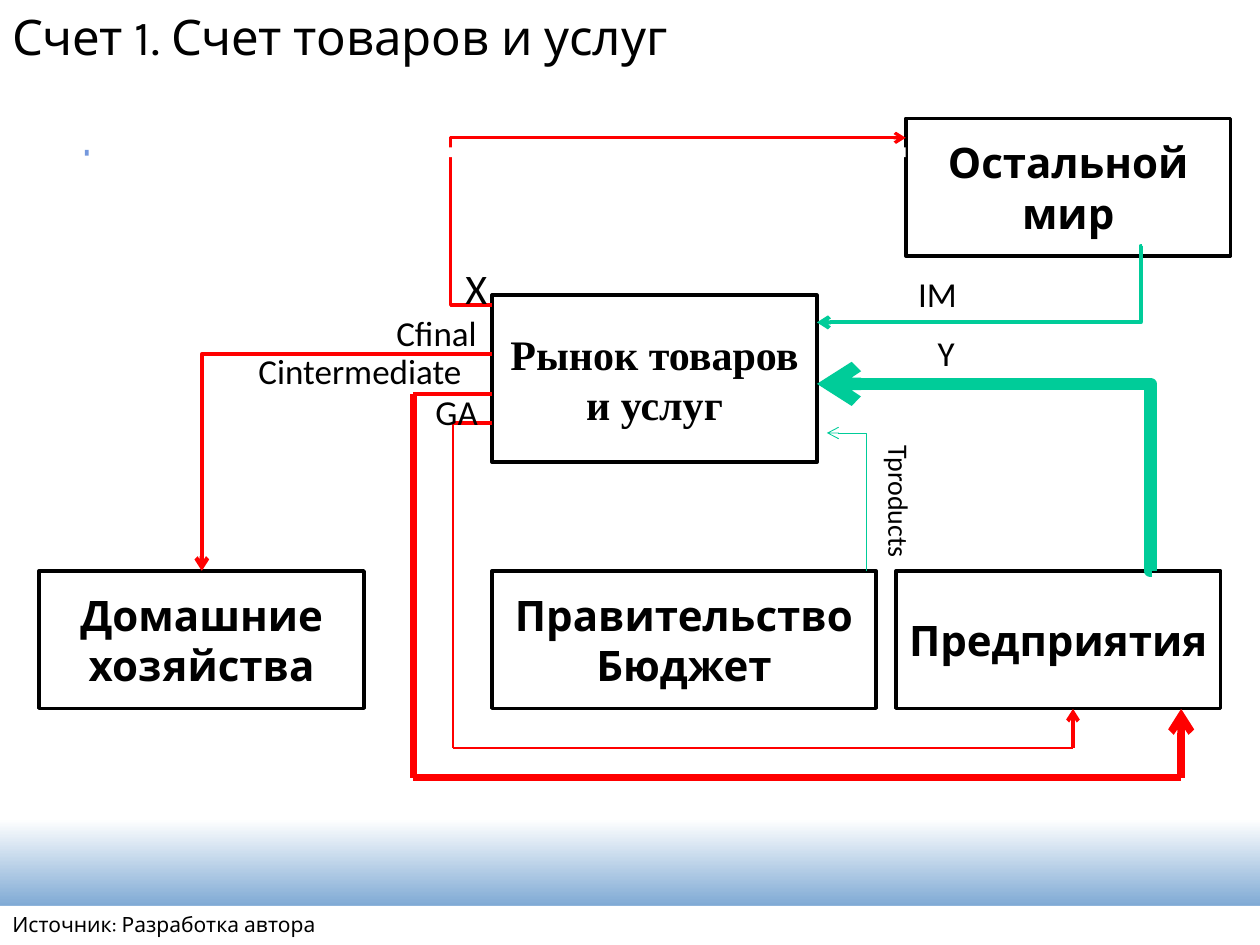
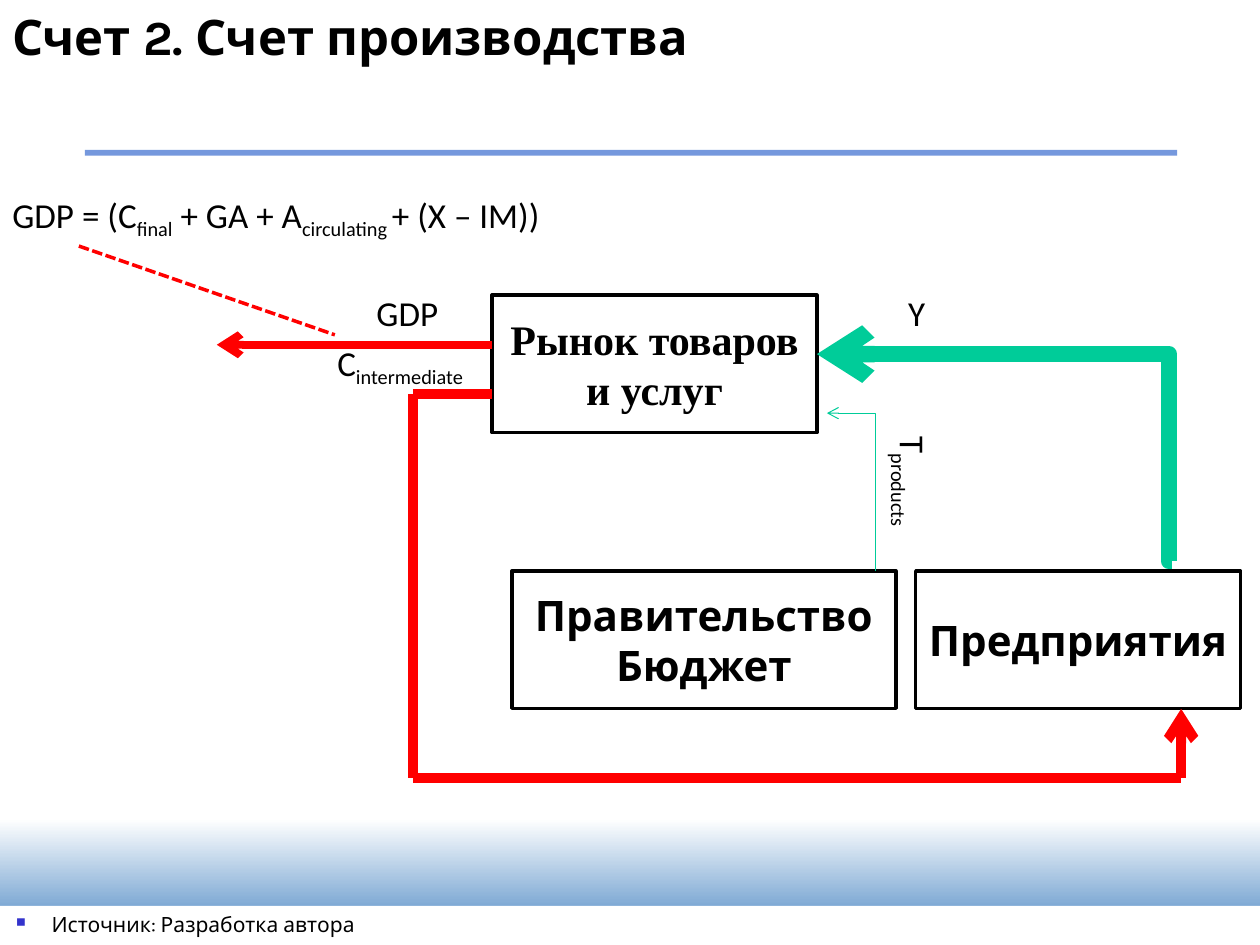
from itertools import pairwise
from pptx import Presentation
from pptx.dml.color import RGBColor
from pptx.enum.dml import MSO_LINE
from pptx.enum.shapes import MSO_CONNECTOR as Join, MSO_SHAPE as Form
from pptx.enum.text import MSO_ANCHOR as Anchor, PP_ALIGN as Align
from pptx.oxml.ns import qn
from pptx.util import Cm, Pt
from lxml.etree import SubElement as Sub

WHITE = RGBColor(0xFF, 0xFF, 0xFF)
BLACK = RGBColor(0, 0, 0)
RED = RGBColor(0xFF, 0, 0)
GREEN = RGBColor(0, 0xCC, 0x99)
BLUE = RGBColor(0x45, 0x83, 0xC1)
RULE = RGBColor(0x75, 0x98, 0xDD)
HEAD, BODY, SERIF = "Karla", "Calibri", "Times New Roman"


def box(page, at, text="", size=20, font=BODY, bold=False, fill=None,
        node=False, turn=0, wrap=True, mark=False):
    """Add a text box, or a rectangle if filled; "|" switches subscript on and off."""
    place = [Cm(n) for n in at]
    if fill is None:
        shape = page.shapes.add_textbox(*place)
    else:
        shape = page.shapes.add_shape(Form.RECTANGLE, *place)
        shape.shadow.inherit = False
        shape.fill.solid()
        shape.fill.fore_color.rgb = fill
        if node:
            shape.line.color.rgb = BLACK
            shape.line.width = Pt(2)
        else:
            shape.line.fill.background()
    shape.rotation = turn
    if not text:
        return shape
    frame = shape.text_frame
    frame.word_wrap = wrap
    frame.vertical_anchor = Anchor.MIDDLE if node else Anchor.TOP
    for row, words in enumerate(text.split("\n")):
        para = frame.add_paragraph() if row else frame.paragraphs[0]
        para.alignment = Align.CENTER if node else Align.LEFT
        for part, word in enumerate(words.split("|")):
            run = para.add_run()
            run.text = word
            if part % 2:
                run._r.get_or_add_rPr().set("baseline", "-25000")
        if mark:
            props = para._p.get_or_add_pPr()
            props.set("marL", str(Cm(0.79)))
            props.set("indent", str(-Cm(0.79)))
            Sub(Sub(props, qn("a:buClr")), qn("a:srgbClr"), val="3333CC")
            Sub(props, qn("a:buSzPct"), val="110000")
            Sub(props, qn("a:buChar"), char="▪")
        para.font.size = Pt(size)
        para.font.name = font
        para.font.bold = bold
        para.font.color.rgb = BLACK
    return shape


def link(page, start, end, color, width, bend=None, head=True, dash=False):
    """Draw a line; bend is the share of its width where it turns, 1 for one corner."""
    kind = Join.STRAIGHT if bend is None else Join.ELBOW
    line = page.shapes.add_connector(kind, *[Cm(n) for n in start + end])
    line.line.color.rgb = color
    line.line.width = Pt(width)
    if dash:
        line.line.dash_style = MSO_LINE.SQUARE_DOT
    props = line._element.spPr
    if head:
        Sub(props.find(qn("a:ln")), qn("a:tailEnd"), type="arrow")
    Sub(props, qn("a:effectLst"))
    geom = props.find(qn("a:prstGeom"))
    if bend == 1:
        geom.set("prst", "bentConnector2")
    elif bend is not None:
        Sub(geom.find(qn("a:avLst")), qn("a:gd"), name="adj1",
            fmla=f"val {round(bend * 100000)}")


deck = Presentation()
deck.slide_width, deck.slide_height = Cm(25.4), Cm(19.05)
goods, make = pages = [deck.slides.add_slide(deck.slide_layouts[6]) for _ in range(2)]

# Shared frame
titles = ["Счет 1. Счет товаров и услуг", "Счет 2. Счет производства"]
for page, title in zip(pages, titles):
    second = page is make
    band = box(page, (0, 16.51, 25.4, 2.54), fill=WHITE)
    band.fill.gradient()
    band.fill.gradient_angle = 270
    for stop, color, spot in zip(band.fill.gradient_stops, (WHITE, BLUE), (0, 1)):
        stop.color.rgb = color
        stop.position = spot
    box(page, (1.71, 3.02, 22.02, 0.12), fill=RULE)
    box(page, (0, 0, 17.86, 2.49), title, 28, HEAD, second, WHITE)
    box(page, (0, 18.26, 25.4, 0.79), "Источник: Разработка автора", 12, HEAD,
        fill=WHITE, mark=second)

# Sectors: page, left, top, width, height, name, font
LOW, WIDE, TALL = 11.51, 6.55, 2.77
STATE, MARKET, FIRMS = "Правительство\nБюджет", "Рынок товаров и услуг", "Предприятия"
nodes = [
    (goods, 18.26, 2.39, WIDE, TALL, "Остальной мир", HEAD),
    (goods, 9.92, LOW, 7.74, TALL, STATE, HEAD),
    (goods, 9.92, 5.95, WIDE, 3.37, MARKET, SERIF),
    (goods, 18.06, LOW, WIDE, TALL, FIRMS, HEAD),
    (goods, 0.79, LOW, WIDE, TALL, "Домашние хозяйства", HEAD),
    (make, 10.32, LOW, 7.74, TALL, STATE, HEAD),
    (make, 9.92, 5.95, WIDE, TALL, MARKET, SERIF),
    (make, 18.46, LOW, WIDE, TALL, FIRMS, HEAD),
]
for page, *at, name, font in nodes:
    box(page, at, name, 24, font, True, WHITE, node=True)

# Flows: page, start, end, colour, width, bend
flows = [
    (goods, (23.22, LOW), (16.47, 7.74), GREEN, 7.2, 0.004),
    (goods, (23.02, 4.96), (16.47, 6.5), GREEN, 2.3, 0.004),
    (goods, (17.46, LOW), (16.67, 8.73), GREEN, 0.5, 0),
    (goods, (9.92, 7.14), (4.07, LOW), RED, 2.4, 1),
    (goods, (9.92, 6.15), (18.26, 2.78), RED, 1.8, -0.1),
    (make, (23.62, 11.31), (16.47, 7.14), GREEN, 9.4, 0.008),
    (make, (17.66, LOW), (16.67, 8.33), GREEN, 0.6, 0),
    (make, (9.92, 6.95), (4.37, 6.95), RED, 4.4, None),
]
for flow in flows:
    link(*flow)
link(make, (1.59, 4.96), (6.75, 6.75), RED, 2, head=False, dash=True)

# Loops under the sectors, from the market to the firms
inner = [(9.92, 8.53), (9.13, 8.53), (9.13, 15.08), (21.63, 15.08), (21.63, 14.29)]
outer = [(9.92, 7.94), (8.33, 7.94), (8.33, 15.68), (23.81, 15.68), (23.81, 14.29)]
loops = [
    (goods, inner, (2.25, 1.3, 1.3, 2.25)),
    (goods, outer, (2.25, 4.2, 4.2, 4.25)),
    (make, outer, (5.6,) * 4),
]
for page, points, widths in loops:
    for (start, end), width in zip(pairwise(points), widths):
        link(page, start, end, RED, width, head=end == points[-1])

# Labels: page, left, top, width, height, text
labels = [
    (goods, 18.26, 5.36, 1.4, 1.12, "IM"),
    (goods, 18.65, 6.55, 1.4, 1.12, "Y"),
    (goods, 7.74, 6.15, 2.18, 1.12, "Cfinal"),
    (goods, 4.96, 6.93, 5.16, 1.12, "Cintermediate"),
    (goods, 8.53, 7.74, 1.7, 1.12, "GA"),
    (make, 18.06, 5.75, 1.4, 1.12, "Y"),
    (make, 6.55, 6.75, 3.57, 1.12, "C|intermediate"),
    (make, 0, 3.77, 13.28, 1.95, "GDP = (C|final| + GA + A|circulating |+ (X – IM))"),
    (make, 7.34, 5.75, 1.79, 1.12, "GDP"),
]
for page, *at, text in labels:
    box(page, at, text)
box(goods, (9.13, 5.16, 0.84, 1.02), "X", 24, wrap=False)
box(goods, (16.64, 9.75, 2.97, 0.94), "Tproducts", 16, turn=90)
box(make, (17.02, 9.38, 2.78, 1.12), "T|products", turn=90)
box(goods, (1.79, 2.97, 16.47, 0.2), fill=WHITE)

deck.save("out.pptx")
